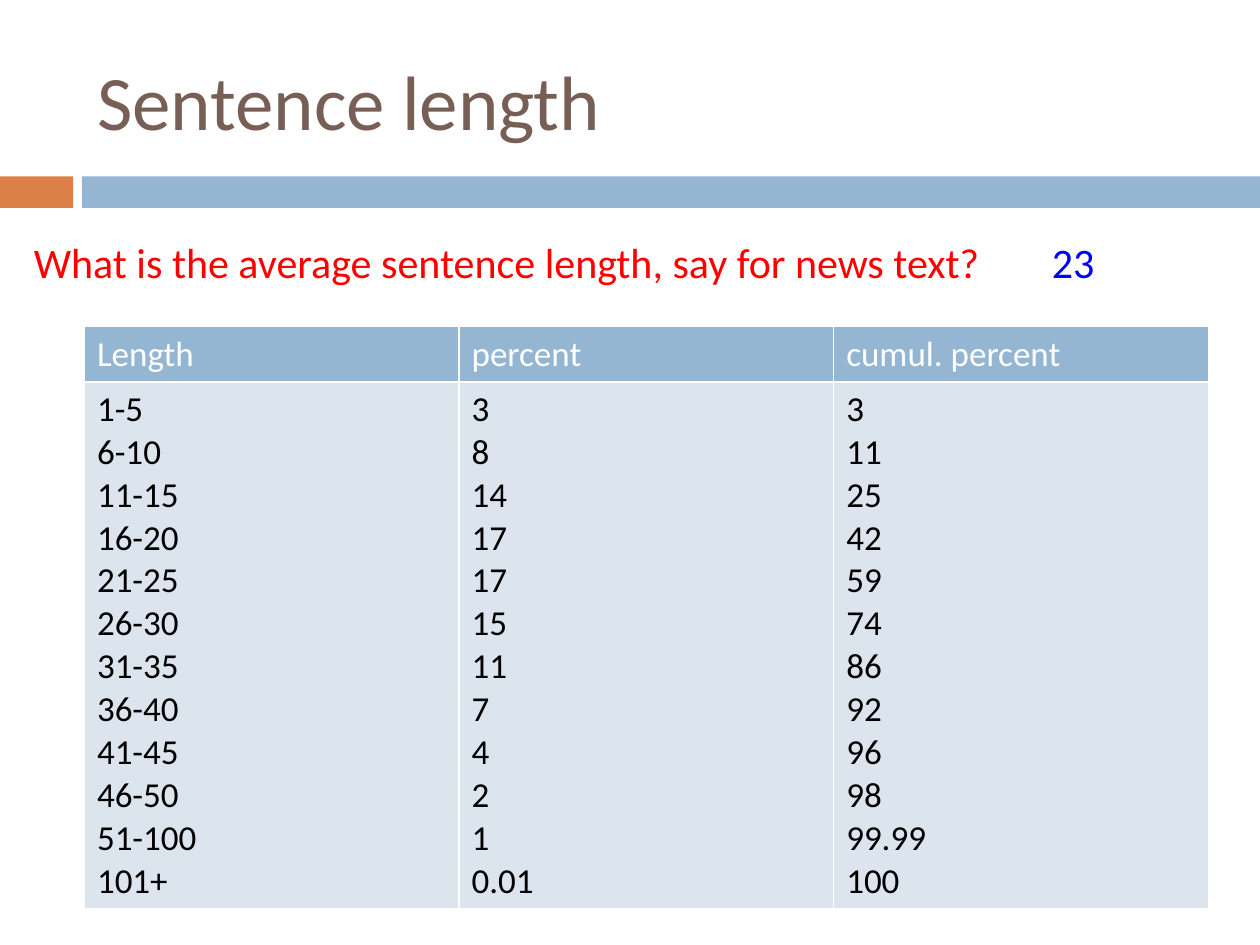
import pptx
import pptx.util
import pptx.dml.color
import pptx.enum.shapes
import pptx.enum.text

TITLE = "Sentence length"
ASKS = [  # text, left, width, colour
    ("What is the average sentence length, say for news text?", 0.17, 8.08, "FF0000"),
    ("23", 8.25, 1.17, "0000FF"),
]
BARS = [(0, 0.58, "DD8047"), (0.65, 9.35, "94B6D2")]  # left, width, fill
HEAD = ["Length", "percent", "cumul. percent"]
ROWS = [
    ("1-5", "3", "3"),
    ("6-10", "8", "11"),
    ("11-15", "14", "25"),
    ("16-20", "17", "42"),
    ("21-25", "17", "59"),
    ("26-30", "15", "74"),
    ("31-35", "11", "86"),
    ("36-40", "7", "92"),
    ("41-45", "4", "96"),
    ("46-50", "2", "98"),
    ("51-100", "1", "99.99"),
    ("101+", "0.01", "100"),
]
LEFT, WIDE = 0.67, 8.92
HIGHS = [0.43, 4.1]
inch = pptx.util.Inches


def color(hue):
    return pptx.dml.color.RGBColor.from_string(hue)


def paint(part, hue):
    part.fill.solid()
    part.fill.fore_color.rgb = color(hue)


def write(frame, lines, size, hue):
    for i, line in enumerate(lines):
        para = frame.paragraphs[0] if i == 0 else frame.add_paragraph()
        run = para.add_run()
        run.text = line
        font = run.font
        font.name, font.size, font.bold = "Calibri", pptx.util.Pt(size), False
        font.color.rgb = color(hue)


deck = pptx.Presentation()
deck.slide_width, deck.slide_height = inch(10), inch(7.5)
slide = deck.slides.add_slide(deck.slide_layouts[5])
shapes = slide.shapes

# Bars under the title
for left, wide, hue in BARS:
    bar = shapes.add_shape(pptx.enum.shapes.MSO_SHAPE.RECTANGLE,
                           inch(left), inch(1.4), inch(wide), inch(0.25))
    bar.shadow.inherit = False
    paint(bar, hue)
    bar.line.fill.background()

# Title
title = shapes.title
title.left, title.top = inch(LEFT), inch(0.25)
title.width, title.height = inch(WIDE), inch(1.08)
title.text_frame.vertical_anchor = pptx.enum.text.MSO_ANCHOR.MIDDLE
write(title.text_frame, [TITLE], 44, "775F55")
title.text_frame.paragraphs[0].alignment = pptx.enum.text.PP_ALIGN.LEFT

# Table: one header row, one body row with a paragraph per entry
table = shapes.add_table(2, len(HEAD), inch(LEFT), inch(2.59),
                         inch(WIDE), inch(sum(HIGHS))).table
for row, high in zip(table.rows, HIGHS):
    row.height = inch(high)
for col, (head, items) in enumerate(zip(HEAD, zip(*ROWS))):
    looks = [([head], "FFFFFF", "94B6D2"), (items, "000000", "DCE5EE")]
    for row, (lines, hue, fill) in enumerate(looks):
        cell = table.cell(row, col)
        paint(cell, fill)
        write(cell.text_frame, lines, 20, hue)

# Question and answer
for text, left, wide, hue in ASKS:
    box = shapes.add_textbox(inch(left), inch(1.83), inch(wide), inch(0.5))
    box.text_frame.word_wrap = True
    write(box.text_frame, [text], 24, hue)

deck.save("out.pptx")
